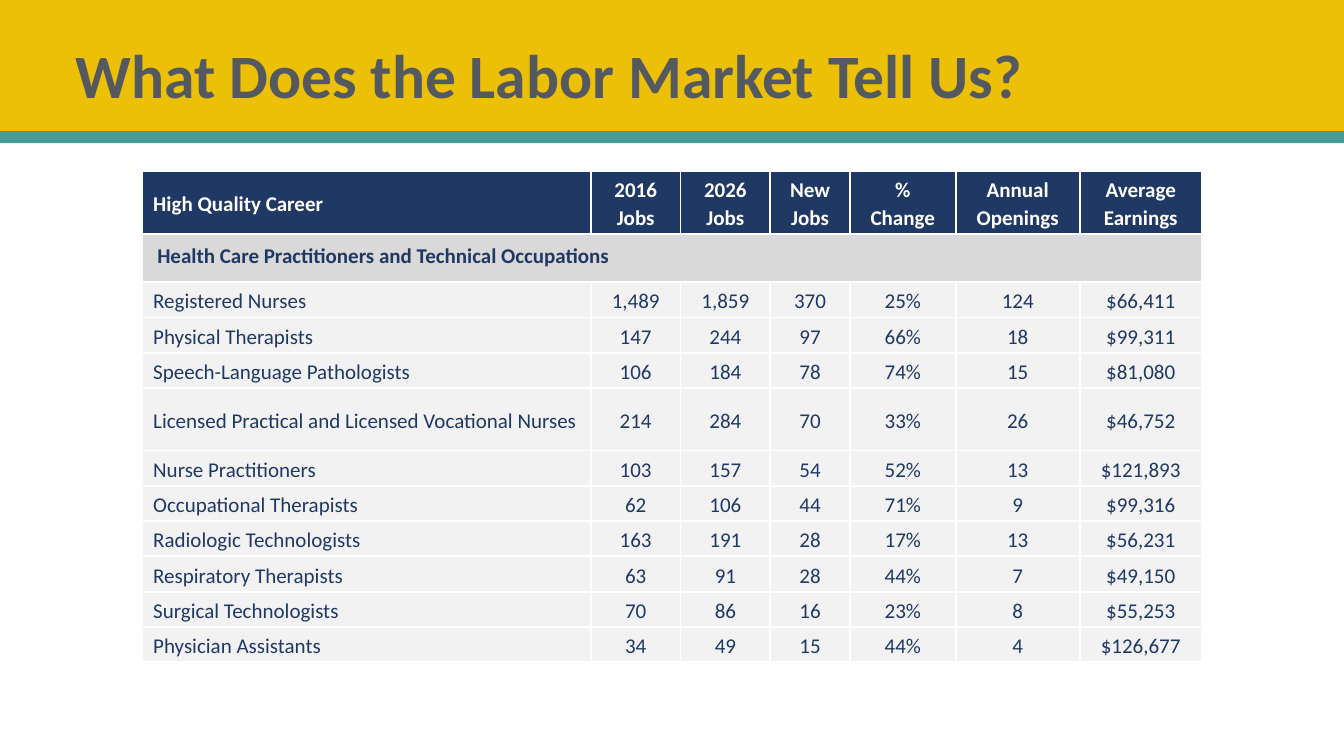
from dataclasses import dataclass

from lxml.etree import SubElement
from pptx import Presentation
from pptx.dml.color import RGBColor
from pptx.enum.shapes import MSO_SHAPE
from pptx.enum.text import MSO_ANCHOR, PP_ALIGN
from pptx.oxml.ns import qn
from pptx.util import Inches, Pt


@dataclass(frozen=True)
class Theme:
    font: str = "Calibri"
    title_size: float = 44
    table_size: float = 15
    border_width: float = 1.5
    gold: str = "ECC007"
    teal: str = "469C95"
    gray: str = "54595F"
    navy: str = "1F3864"
    section: str = "D9D9D9"
    body: str = "F2F2F2"
    white: str = "FFFFFF"


THEME = Theme()

COLUMN_WIDTHS = [4.45, 0.89, 0.89, 0.79, 1.05, 1.23, 1.21]
HEADER_HEIGHT, SECTION_HEIGHT, ROW_HEIGHT = 0.62, 0.48, 0.35
TALL_CAREER = "Licensed Practical and Licensed Vocational Nurses"

HEADERS = ["High Quality Career", "2016 Jobs", "2026 Jobs", "New Jobs",
           "% Change", "Annual Openings", "Average Earnings"]
SECTION = "Health Care Practitioners and Technical Occupations"
CAREERS = [
    ["Registered Nurses", "1,489", "1,859", "370", "25%", "124", "$66,411"],
    ["Physical Therapists", "147", "244", "97", "66%", "18", "$99,311"],
    ["Speech-Language Pathologists", "106", "184", "78", "74%", "15", "$81,080"],
    [TALL_CAREER, "214", "284", "70", "33%", "26", "$46,752"],
    ["Nurse Practitioners", "103", "157", "54", "52%", "13", "$121,893"],
    ["Occupational Therapists", "62", "106", "44", "71%", "9", "$99,316"],
    ["Radiologic Technologists", "163", "191", "28", "17%", "13", "$56,231"],
    ["Respiratory Therapists", "63", "91", "28", "44%", "7", "$49,150"],
    ["Surgical Technologists", "70", "86", "16", "23%", "8", "$55,253"],
    ["Physician Assistants", "34", "49", "15", "44%", "4", "$126,677"],
]


def style_paragraph(p, size, color, bold, spacing, align=PP_ALIGN.LEFT):
    p.alignment = align
    p.line_spacing = spacing
    for r in p.runs:
        r.font.name = THEME.font
        r.font.size = Pt(size)
        r.font.bold = bold
        r.font.color.rgb = RGBColor.from_string(color)


def add_band(slide, top, height, color):
    sp = slide.shapes.add_shape(MSO_SHAPE.RECTANGLE, 0, Inches(top),
                                Inches(13.33), Inches(height))
    sp.shadow.inherit = False
    sp.fill.solid()
    sp.fill.fore_color.rgb = RGBColor.from_string(color)
    sp.line.fill.background()


def add_title(slide, text):
    sp = slide.shapes.add_textbox(Inches(0.65), Inches(0.05),
                                  Inches(11.5), Inches(1.45))
    tf = sp.text_frame
    tf.word_wrap = True
    tf.vertical_anchor = MSO_ANCHOR.MIDDLE
    tf.text = text
    style_paragraph(tf.paragraphs[0], THEME.title_size, THEME.gray, True, 0.9)


def add_borders(cell):
    tc_pr = cell._tc.get_or_add_tcPr()
    for side in ("a:lnL", "a:lnR", "a:lnT", "a:lnB"):
        ln = SubElement(tc_pr, qn(side), w=str(Pt(THEME.border_width)))
        fill = SubElement(ln, qn("a:solidFill"))
        SubElement(fill, qn("a:srgbClr"), val=THEME.white)


def style_cell(cell, fill, color, bold, align, anchor, margins):
    add_borders(cell)
    cell.fill.solid()
    cell.fill.fore_color.rgb = RGBColor.from_string(fill)
    cell.vertical_anchor = anchor
    side, top, bottom = (Inches(m) for m in margins)
    cell.margin_left = cell.margin_right = side
    cell.margin_top, cell.margin_bottom = top, bottom
    style_paragraph(cell.text_frame.paragraphs[0], THEME.table_size, color,
                    bold, 1.07, align)


def fill_row(table, row, texts, fill, color, bold=False,
             anchor=MSO_ANCHOR.MIDDLE, margins=(0.11, 0.02, 0)):
    for col, text in enumerate(texts):
        cell = table.cell(row, col)
        cell.text = text
        align = PP_ALIGN.CENTER if col else PP_ALIGN.LEFT
        style_cell(cell, fill, color, bold, align, anchor, margins)


def add_career_table(slide):
    heights = [HEADER_HEIGHT, SECTION_HEIGHT]
    heights += [HEADER_HEIGHT if career[0] == TALL_CAREER else ROW_HEIGHT
                for career in CAREERS]
    frame = slide.shapes.add_table(
        len(heights), len(COLUMN_WIDTHS), Inches(1.41), Inches(1.7),
        Inches(sum(COLUMN_WIDTHS)), Inches(sum(heights)))
    table = frame.table
    table.horz_banding = False
    for column, width in zip(table.columns, COLUMN_WIDTHS):
        column.width = Inches(width)
    for row, height in zip(table.rows, heights):
        row.height = Inches(height)

    # Header and full-width section row
    fill_row(table, 0, HEADERS, THEME.navy, THEME.white, bold=True)
    last_col = len(COLUMN_WIDTHS) - 1
    fill_row(table, 1, [SECTION] + [""] * last_col, THEME.section, THEME.navy,
             bold=True, anchor=MSO_ANCHOR.TOP, margins=(0.15, 0.08, 0.08))
    table.cell(1, 0).merge(table.cell(1, last_col))

    # Careers
    for row, career in enumerate(CAREERS, start=2):
        fill_row(table, row, career, THEME.body, THEME.navy)


def main():
    prs = Presentation()
    prs.slide_width, prs.slide_height = Inches(13.33), Inches(7.5)
    slide = prs.slides.add_slide(prs.slide_layouts[6])

    # Title banner
    add_band(slide, 0, 1.41, THEME.gold)
    add_band(slide, 1.3, 0.12, THEME.teal)

    add_career_table(slide)
    add_title(slide, "What Does the Labor Market Tell Us?")
    prs.save("out.pptx")


if __name__ == "__main__":
    main()
